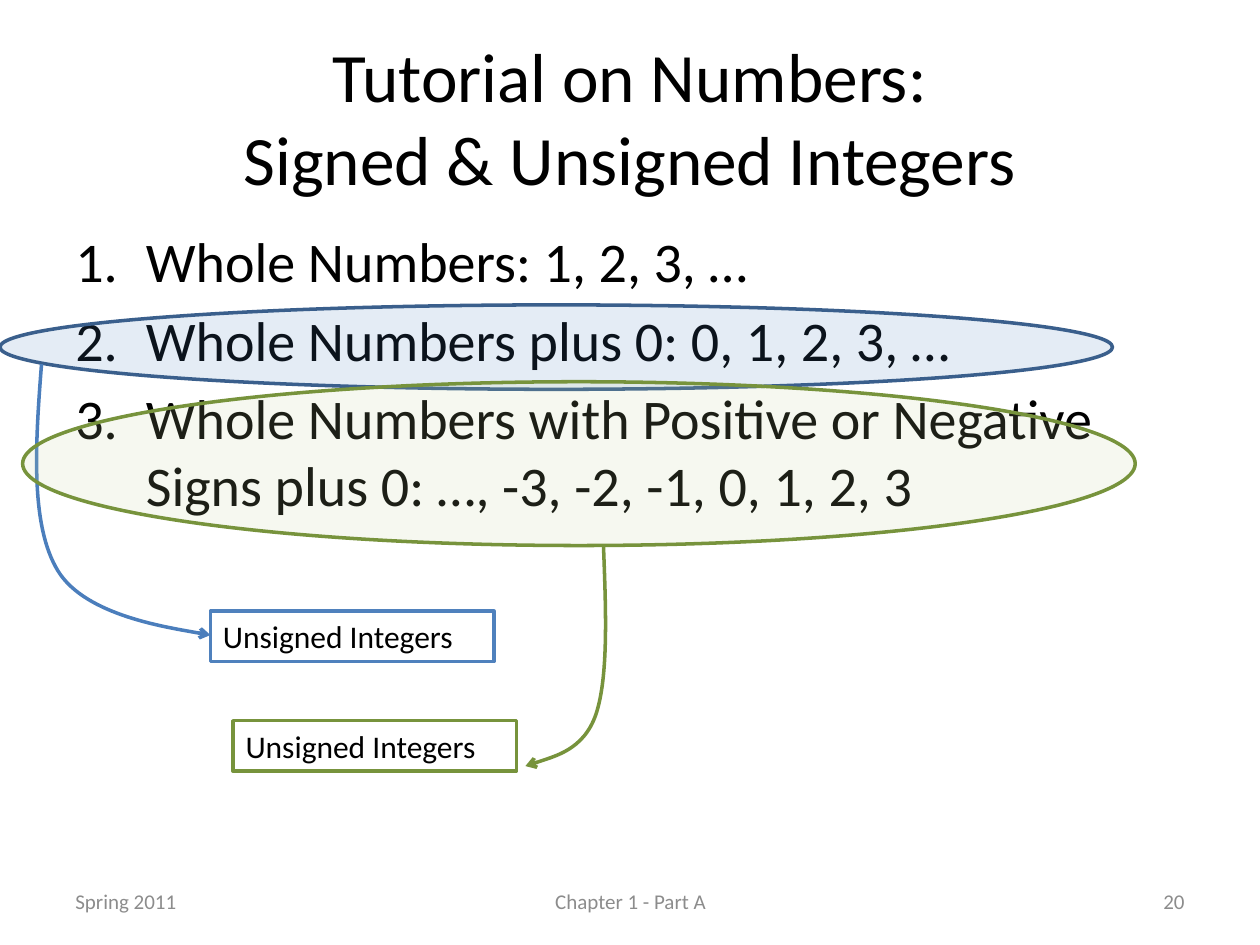
"""Build the slide on signed and unsigned integers."""
from dataclasses import dataclass

from lxml import etree
from pptx import Presentation
from pptx.dml.color import RGBColor
from pptx.enum.shapes import MSO_SHAPE
from pptx.enum.text import MSO_ANCHOR, MSO_AUTO_SIZE, PP_ALIGN
from pptx.oxml.ns import qn
from pptx.util import Inches, Pt

ELLIPSE, RECTANGLE = MSO_SHAPE.OVAL, MSO_SHAPE.RECTANGLE
TOP, MIDDLE = MSO_ANCHOR.TOP, MSO_ANCHOR.MIDDLE
LEFT, CENTER, RIGHT = PP_ALIGN.LEFT, PP_ALIGN.CENTER, PP_ALIGN.RIGHT
FIT_SHAPE, NO_FIT = MSO_AUTO_SIZE.SHAPE_TO_FIT_TEXT, MSO_AUTO_SIZE.NONE
TITLE_ONLY = 5
COLUMNS, ROWS = 100, 75


@dataclass(frozen=True)
class Theme:
    """Colours and type sizes of the slide."""
    font: str = "Calibri"
    ink: str = "000000"
    muted: str = "8C8C8C"
    paper: str = "FFFFFF"
    blue: str = "4F81BD"
    blue_outline: str = "3A5F8C"
    blue_arrow: str = "4B7EBC"
    green: str = "77933C"
    green_tint: str = "C3D69B"
    title_size: float = 39.6
    body_size: float = 32
    label_size: float = 18
    footer_size: float = 12
    line_width: float = 2
    tint_opacity: int = 15


def write_text(frame, *lines, font, size, color, align=LEFT, anchor=TOP, space_before=0):
    """Fill a text frame with one formatted paragraph per line."""
    frame.word_wrap = True
    frame.vertical_anchor = anchor
    for index, line in enumerate(lines):
        paragraph = frame.add_paragraph() if index else frame.paragraphs[0]
        paragraph.text = line
        paragraph.alignment = align
        paragraph.space_before = Pt(space_before)
        for run in paragraph.runs:
            run.font.name = font
            run.font.size = Pt(size)
            run.font.color.rgb = RGBColor.from_string(color)


class SlideBuilder:
    """Draws styled elements on a grid over the current slide."""

    def __init__(self, presentation, theme):
        """Add a title-only slide and work out its grid."""
        self.theme = theme
        self.slide = presentation.slides.add_slide(presentation.slide_layouts[TITLE_ONLY])
        self.column = presentation.slide_width / COLUMNS
        self.row = presentation.slide_height / ROWS

    def place(self, column, row, width=0, height=0):
        """Turn grid units into slide lengths."""
        return (round(column * self.column), round(row * self.row),
                round(width * self.column), round(height * self.row))

    def title(self, text, box):
        """Move and format the title placeholder."""
        title = self.slide.shapes.title
        title.left, title.top, title.width, title.height = self.place(*box)
        write_text(title.text_frame, text, font=self.theme.font, size=self.theme.title_size,
                   color=self.theme.ink, align=CENTER, anchor=MIDDLE)
        title.text_frame.auto_size = NO_FIT

    def numbered_list(self, lines, box):
        """Add an automatically numbered list."""
        frame = self.slide.shapes.add_textbox(*self.place(*box)).text_frame
        size = self.theme.body_size
        write_text(frame, *lines, font=self.theme.font, size=size, color=self.theme.ink,
                   space_before=size * 0.2)
        indent = Inches(0.56)
        for paragraph in frame.paragraphs:
            properties = paragraph._p.get_or_add_pPr()
            properties.set("marL", str(indent))
            properties.set("indent", str(-indent))
            etree.SubElement(properties, qn("a:buFont"), typeface="+mj-lt")
            etree.SubElement(properties, qn("a:buAutoNum"), type="arabicPeriod")

    def footer(self, text, column, width, align):
        """Add one entry to the footer row."""
        shape = self.slide.shapes.add_textbox(*self.place(column, 69.5, width, 4))
        write_text(shape.text_frame, text, font=self.theme.font, size=self.theme.footer_size,
                   color=self.theme.muted, align=align, anchor=MIDDLE)

    def outline(self, shape, color):
        """Give a shape a plain line without shadow."""
        shape.shadow.inherit = False
        shape.line.color.rgb = RGBColor.from_string(color)
        shape.line.width = Pt(self.theme.line_width)

    def filled_shape(self, kind, box, fill, line):
        """Add a preset shape with a fill and an outline."""
        shape = self.slide.shapes.add_shape(kind, *self.place(*box))
        shape.fill.solid()
        shape.fill.fore_color.rgb = RGBColor.from_string(fill)
        self.outline(shape, line)
        return shape

    def highlight(self, box, fill, line):
        """Add a translucent ellipse."""
        shape = self.filled_shape(ELLIPSE, box, fill, line)
        color = shape._element.spPr.find(qn("a:solidFill")).find(qn("a:srgbClr"))
        etree.SubElement(color, qn("a:alpha"), val=str(self.theme.tint_opacity * 1000))

    def label(self, text, column, row, line):
        """Add a boxed label."""
        shape = self.filled_shape(RECTANGLE, (column, row, 22.5, 4), self.theme.paper, line)
        write_text(shape.text_frame, text, font=self.theme.font, size=self.theme.label_size,
                   color=self.theme.ink)
        shape.text_frame.auto_size = FIT_SHAPE

    def curved_arrow(self, points, color):
        """Draw cubic curves through a start point and triples of control points."""
        start, *controls = [self.place(*point)[:2] for point in points]
        builder = self.slide.shapes.build_freeform(*start)
        builder.add_line_segments(controls, close=False)
        shape = builder.convert_to_shape()
        segments = list(shape._element.iter(qn("a:lnTo")))
        outline_path = segments[0].getparent()
        for index in range(0, len(segments), 3):
            curve = etree.SubElement(outline_path, qn("a:cubicBezTo"))
            for segment in segments[index:index + 3]:
                curve.append(segment[0])
                outline_path.remove(segment)
        shape.fill.background()
        self.outline(shape, color)
        etree.SubElement(shape.line._get_or_add_ln(), qn("a:tailEnd"), type="arrow")


def main():
    """Compose and save the slide."""
    presentation = Presentation()
    presentation.slide_width, presentation.slide_height = Inches(10), Inches(7.5)
    theme = Theme()
    builder = SlideBuilder(presentation, theme)

    builder.title("Tutorial on Numbers:\vSigned & Unsigned Integers", (5, 3, 90, 12.5))
    builder.numbered_list((
        "Whole Numbers: 1, 2, 3, …",
        "Whole Numbers plus 0: 0, 1, 2, 3, …",
        "Whole Numbers with Positive or Negative Signs plus 0: …, -3, -2, -1, 0, 1, 2, 3",
    ), (5, 17.5, 90, 28.3))

    builder.footer("Spring 2011", 5, 23.3, LEFT)
    builder.footer("Chapter 1 - Part A", 34.2, 31.7, CENTER)
    builder.footer("20", 71.7, 23.3, RIGHT)

    builder.highlight((0, 24.2, 88.3, 6.7), theme.blue, theme.blue_outline)
    builder.curved_arrow(((3.3, 28.9), (2.8, 35.3), (2.4, 41.7), (4.6, 45.3),
                          (6.8, 48.9), (16.7, 50.4), (16.7, 50.4)), theme.blue_arrow)
    builder.label("Unsigned Integers", 16.7, 48.5, theme.blue)

    builder.highlight((1.8, 30.3, 88.3, 13), theme.green_tint, theme.green)
    builder.label("Unsigned Integers", 18.5, 57.2, theme.green)
    builder.curved_arrow(((47.9, 43.3), (48.1, 48.5), (48.3, 53.7), (47.3, 56.7),
                          (46.3, 59.6), (41.7, 60.8), (41.7, 60.8)), theme.green)

    presentation.save("out.pptx")


if __name__ == "__main__":
    main()
